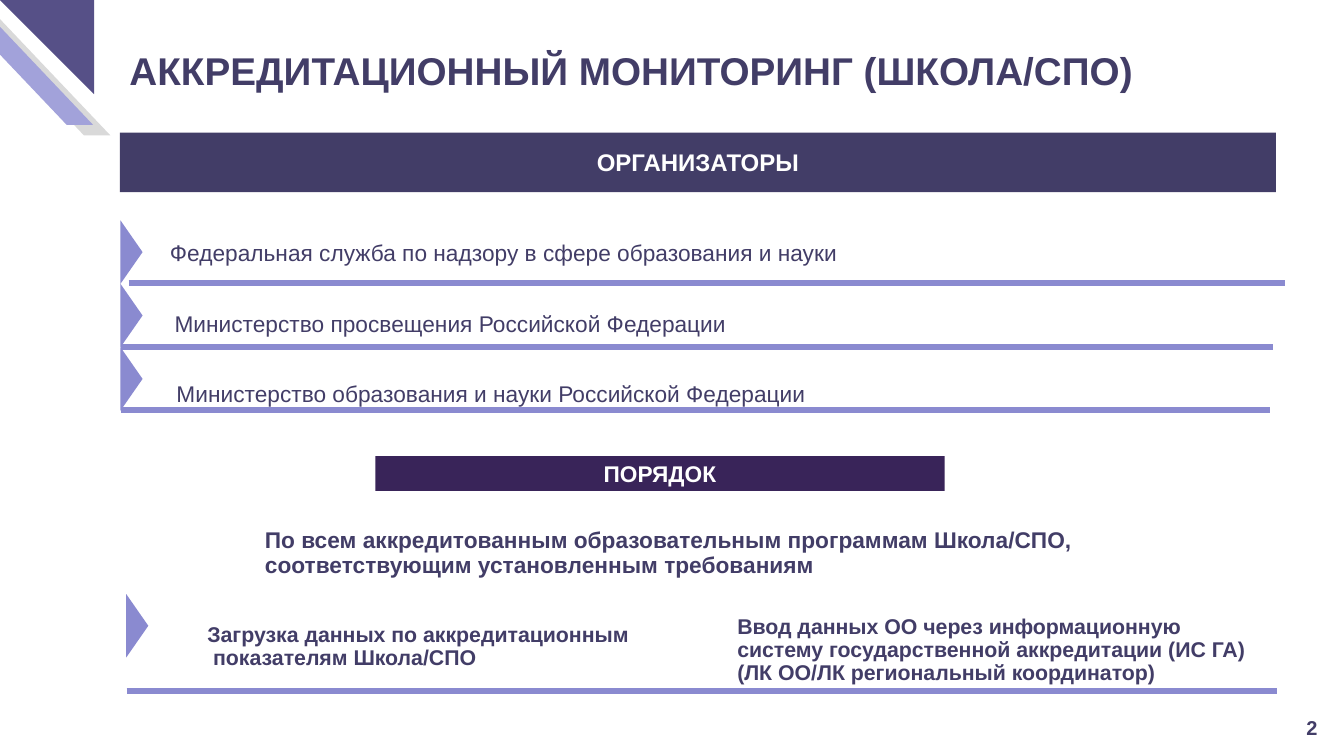
from lxml import etree
from pptx import Presentation
from pptx.dml.color import RGBColor
from pptx.enum.shapes import MSO_CONNECTOR as Connector, MSO_SHAPE as Shape
from pptx.enum.text import MSO_ANCHOR as Anchor, PP_ALIGN as Align
from pptx.oxml.ns import qn
from pptx.util import Inches, Pt

FONT = "Arial"
INK = "423D67"
ACCENT = "8A8AD0"
WHITE = "FFFFFF"
NO_INSETS = (0, 0)
INSETS = (0.1, 0.05)


def color(hex_string):
    return RGBColor.from_string(hex_string)


def add_figure(page, kind, left, top, width, height, fill):
    figure = page.shapes.add_shape(
        kind, Inches(left), Inches(top), Inches(width), Inches(height))
    figure.shadow.inherit = False
    figure.fill.solid()
    figure.fill.fore_color.rgb = color(fill)
    figure.line.fill.background()
    return figure


def add_stripe(page, left, top, fill):
    stripe = add_figure(page, Shape.PARALLELOGRAM, left, top, 1.51, 1.3, fill)
    stripe.adjustments[0] = 0.95
    stripe.element.spPr.xfrm.set("flipH", "1")


def add_corner(page):
    add_stripe(page, -0.36, 0.11, "D9D9D9")
    add_stripe(page, -0.54, 0, "A2A2DA")
    corner = add_figure(page, Shape.RIGHT_TRIANGLE, 0, 0, 0.98, 0.98, "565087")
    corner.rotation = 180


def write(shape, text, size, bold, ink=INK, insets=NO_INSETS, spacing=None,
          align=Align.LEFT, anchor=Anchor.TOP):
    frame = shape.text_frame
    frame.word_wrap = True
    frame.vertical_anchor = anchor
    frame.margin_left = frame.margin_right = Inches(insets[0])
    frame.margin_top = frame.margin_bottom = Inches(insets[1])
    frame.text = text
    for para in frame.paragraphs:
        para.alignment = align
        if spacing:
            para.line_spacing = spacing
        para.font.name = FONT
        para.font.size = Pt(size)
        para.font.bold = bold
        para.font.color.rgb = color(ink)
    return frame


def add_text(page, left, top, width, height, text, size, bold=True, **style):
    box = page.shapes.add_textbox(
        Inches(left), Inches(top), Inches(width), Inches(height))
    return write(box, text, size, bold, **style)


def add_banner(page, left, top, width, height, text, size, fill):
    banner = add_figure(page, Shape.RECTANGLE, left, top, width, height, fill)
    write(banner, text, size, True, WHITE, INSETS,
          align=Align.CENTER, anchor=Anchor.MIDDLE)


def add_marker(page, left, top):
    marker = add_figure(
        page, Shape.ISOSCELES_TRIANGLE, left, top, 0.66, 0.23, ACCENT)
    marker.rotation = 90


def add_rule(page, left, right, y):
    rule = page.shapes.add_connector(
        Connector.STRAIGHT, Inches(left), Inches(y), Inches(right), Inches(y))
    rule.line.color.rgb = color(ACCENT)
    rule.line.width = Pt(4.5)
    etree.SubElement(rule.element.spPr, qn("a:effectLst"))


def add_organizers(page):
    add_banner(page, 1.25, 1.38, 12.04, 0.62, "ОРГАНИЗАТОРЫ", 18, INK)
    rule_ends = [(1.34, 13.39), (1.26, 13.26), (1.26, 13.23)]
    for row, (left, right) in enumerate(rule_ends):
        add_marker(page, 1.04, 2.51 + 0.66 * row)
        add_rule(page, left, right, 2.95 + 0.66 * row)
    add_text(page, 1.77, 2.52, 11.42, 0.25,
             "Федеральная служба по надзору в сфере образования и науки",
             17, False, spacing=0.9)
    add_text(page, 1.72, 3.18, 7.14, 0.36,
             "Министерство просвещения Российской Федерации",
             17, False, insets=INSETS)
    add_text(page, 1.74, 3.9, 10.46, 0.63,
             "Министерство образования и науки Российской Федерации",
             17, False, insets=INSETS)


def add_procedure(page):
    add_banner(page, 3.91, 4.75, 5.93, 0.36, "ПОРЯДОК", 17, "392459")
    add_text(page, 2.76, 5.51, 9, 0.51,
             "По всем аккредитованным образовательным программам Школа/СПО,\v"
             "соответствующим установленным требованиям", 17, spacing=0.9)
    add_marker(page, 1.1, 6.4)
    upload = add_text(page, 2.16, 6.5, 5.32, 0.48,
                      "Загрузка данных по аккредитационным\n"
                      "показателям Школа/СПО", 16, spacing=0.9)
    upload.paragraphs[1].element.get_or_add_pPr().set(
        "marL", str(Inches(0.06))) if hasattr(
        upload.paragraphs[1], "element") else upload.paragraphs[1]._p.get_or_add_pPr().set(
        "marL", str(Inches(0.06)))
    add_text(page, 7.68, 6.41, 5.51, 0.72,
             "Ввод данных ОО через информационную систему государственной "
             "аккредитации (ИС ГА)\v(ЛК ОО/ЛК региональный координатор)",
             16, spacing=0.9)
    add_rule(page, 1.32, 13.3, 7.19)


def main():
    deck = Presentation()
    deck.slide_width = Inches(14)
    deck.slide_height = Inches(7.87)
    page = deck.slides.add_slide(deck.slide_layouts[6])
    add_corner(page)
    add_text(page, 1.25, 0.44, 11.72, 0.59,
             "АККРЕДИТАЦИОННЫЙ МОНИТОРИНГ (ШКОЛА/СПО)", 29, insets=INSETS)
    add_organizers(page)
    add_procedure(page)
    add_text(page, 13.51, 7.4, 0.29, 0.35, "2", 15, insets=INSETS)
    deck.save("out.pptx")


if __name__ == "__main__":
    main()
